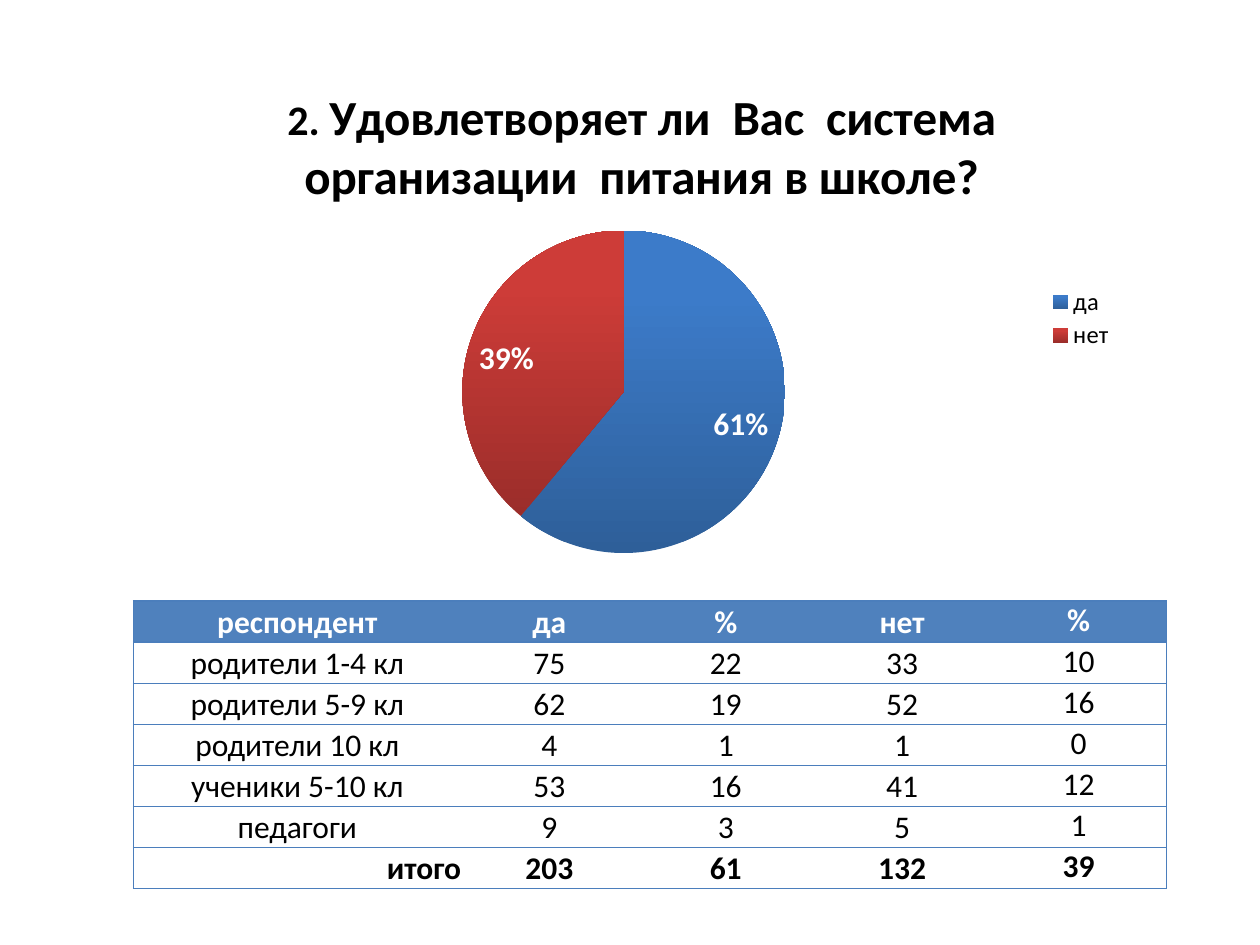
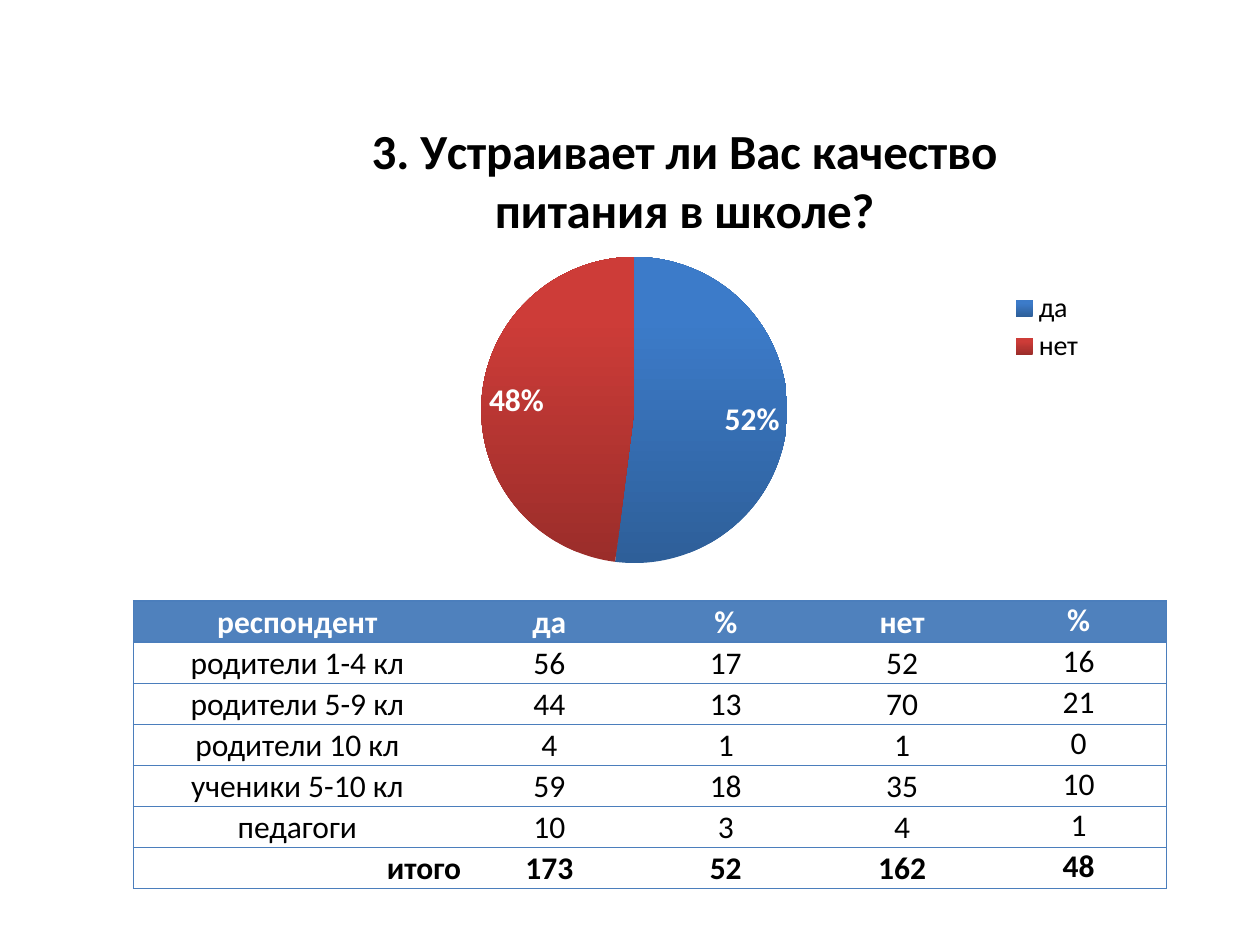
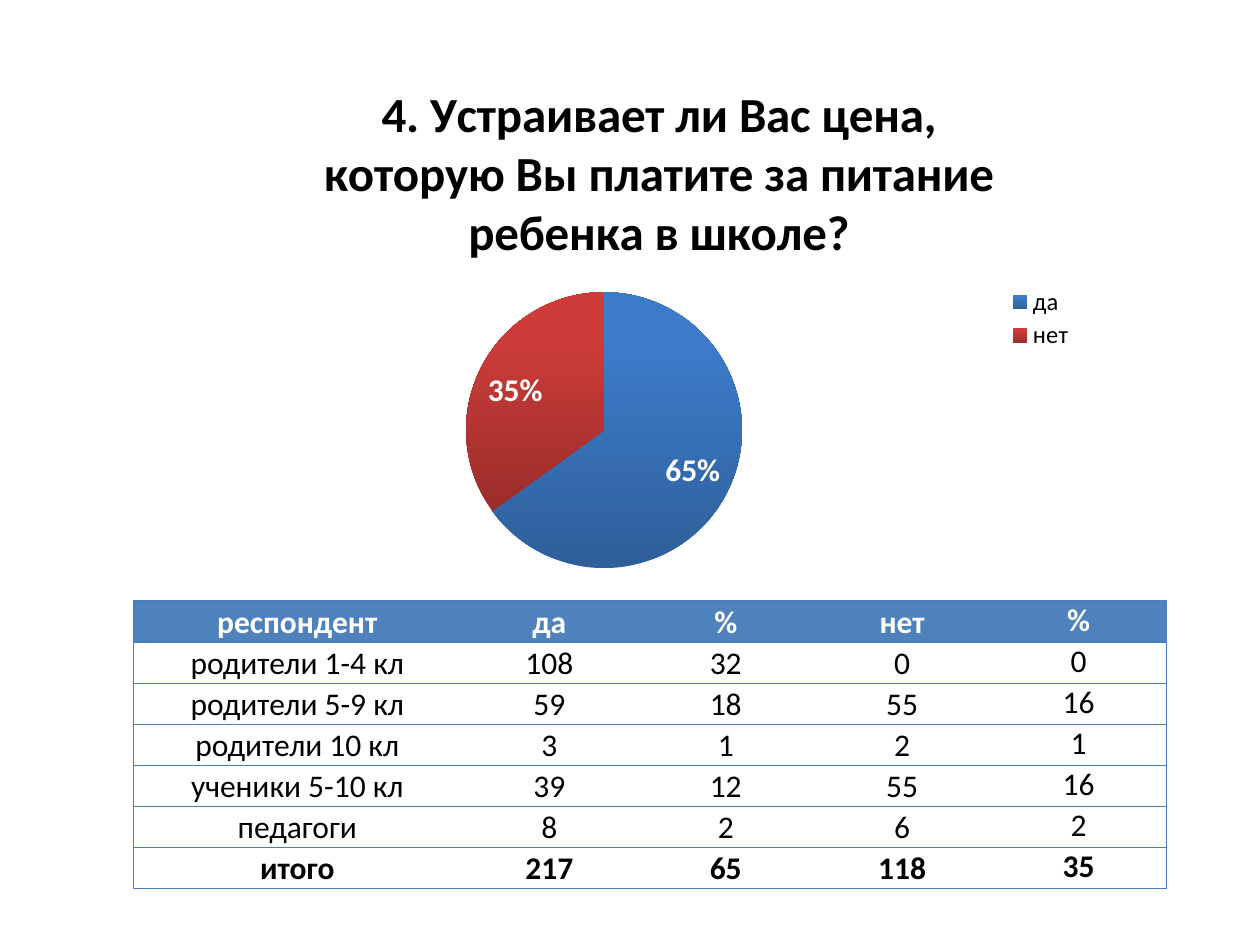
from lxml import etree
from pptx import Presentation
from pptx.chart.data import CategoryChartData as ChartData
from pptx.dml.color import RGBColor as RGB
from pptx.enum.chart import XL_CHART_TYPE as Kind, XL_LABEL_POSITION as Spot
from pptx.enum.chart import XL_LEGEND_POSITION as Side
from pptx.enum.text import MSO_ANCHOR as Anchor, PP_ALIGN as Align
from pptx.oxml import parse_xml
from pptx.oxml.ns import nsdecls, qn
from pptx.util import Inches, Pt

FONT = "Calibri"
BLACK = RGB(0, 0, 0)
WHITE = RGB(255, 255, 255)
HEAD = RGB(0x4F, 0x81, 0xBD)
RULE = RGB(0x4B, 0x7E, 0xBC)
# Dark and light end of each slice
SLICES = [
    (RGB(0x2E, 0x5F, 0x99), RGB(0x3C, 0x7B, 0xC9)),
    (RGB(0x9B, 0x2D, 0x2A), RGB(0xCD, 0x3C, 0x38)),
]
PLAIN = "{2D5ABB26-0587-4C30-8999-92F81FD0307C}"

ANSWERS = ["да", "нет"]
HEADER = ["респондент", "да", "%", "нет", "%"]
GROUPS = ["родители 1-4 кл", "родители 5-9 кл", "родители 10 кл",
          "ученики 5-10 кл", "педагоги"]
GRID = (1.06, 4.77, 8.2, 2.28)
WIDTHS = [2.6, 1.4, 1.4, 1.4, 1.4]

# Boxes are left, top, width, height; title is left, top; pie is left, top, size
POLLS = [
    dict(text=[("2. ", 24), ("Удовлетворяет ли  Вас  система организации  "
                             "питания в школе?", 28)],
         box=(1.61, 0.52, 7.32, 4.02), title=(2.25, 0.66),
         pie=(3.67, 1.83, 2.56), key=(8.28, 2.25, 0.6, 0.56), size=14,
         total=Align.RIGHT,
         rows=[(75, 22, 33, 10), (62, 19, 52, 16), (4, 1, 1, 0),
               (53, 16, 41, 12), (9, 3, 5, 1)]),
    dict(text=[("3. Устраивает ли Вас качество питания в школе?", 28)],
         box=(2.09, 0.6, 6.61, 4.02), title=(2.88, 0.86),
         pie=(3.82, 2.04, 2.43), key=(7.98, 2.28, 0.66, 0.64), size=16,
         total=Align.RIGHT,
         rows=[(56, 17, 52, 16), (44, 13, 70, 21), (4, 1, 1, 0),
               (59, 18, 35, 10), (10, 3, 4, 1)]),
    dict(text=[("4. Устраивает ли Вас цена, которую Вы платите за питание "
                "ребенка в школе?", 28)],
         box=(1.61, 0.36, 7.01, 4.33), title=(2.5, 0.57),
         pie=(3.7, 2.32, 2.19), key=(7.96, 2.25, 0.6, 0.56), size=14,
         total=Align.CENTER,
         rows=[(108, 32, 0, 0), (59, 18, 55, 16), (3, 1, 2, 1),
               (39, 12, 55, 16), (8, 2, 6, 2)]),
]


def style(font, size, color, bold=False):
    font.name, font.size, font.bold = FONT, Pt(size), bold
    font.color.rgb = color


def pin(part, box, spot, inner=False):
    """Fix a chart part at a slide position, as shares of the chart box."""
    left, top, width, height = box
    marks = {"x": (spot[0] - left) / width, "y": (spot[1] - top) / height}
    if len(spot) == 4:
        marks.update(w=spot[2] / width, h=spot[3] / height)
    target = '<c:layoutTarget val="inner"/>' if inner else ""
    modes = '<c:xMode val="edge"/><c:yMode val="edge"/>'
    vals = "".join(f'<c:{k} val="{v:.4f}"/>' for k, v in marks.items())
    layout = parse_xml(f'<c:layout {nsdecls("c")}><c:manualLayout>{target}'
                       f'{modes}{vals}</c:manualLayout></c:layout>')
    old = part.find(qn("c:layout"))
    if old is not None:
        part.remove(old)
    # Layout leads the plot area and follows the first child elsewhere
    part.insert(0 if inner else 1, layout)


def add_pie(slide, poll, shares):
    box = poll["box"]
    data = ChartData()
    data.categories = ANSWERS
    data.add_series("Series 1", shares)
    frame = slide.shapes.add_chart(Kind.PIE, *map(Inches, box), data)
    chart = frame.chart
    style(chart.font, 18, BLACK)

    # Title
    chart.has_title = True
    head = chart.chart_title
    para = head.text_frame.paragraphs[0]
    for text, size in poll["text"]:
        run = para.add_run()
        run.text = text
        style(run.font, size, BLACK, True)
    head.include_in_layout = False
    pin(head._element, box, poll["title"])

    # Legend
    chart.has_legend = True
    key = chart.legend
    key.position = Side.RIGHT
    key.include_in_layout = False
    style(key.font, poll["size"], BLACK)
    pin(key._element, box, poll["key"])

    # Slices and labels
    plot = chart.plots[0]
    plot.vary_by_categories = True
    for i, tones in enumerate(SLICES):
        fill = plot.series[0].points[i].format.fill
        fill.gradient()
        fill.gradient_angle = 90
        for stop, tone, place in zip(fill.gradient_stops, tones, (0, 0.8)):
            stop.color.rgb = tone
            stop.position = place
    plot.has_data_labels = True
    tags = plot.data_labels
    tags.show_percentage, tags.show_value = True, False
    tags.number_format, tags.number_format_is_linked = "0%", False
    tags.position = Spot.INSIDE_END
    style(tags.font, 18, WHITE, True)
    left, top, size = poll["pie"]
    area = chart._chartSpace.chart.plotArea
    pin(area, box, (left, top, size, size), inner=True)


def rule(cell, sides):
    props = cell._tc.get_or_add_tcPr()
    for n, side in enumerate(s for s in "LRTB" if s in sides):
        props.insert(n, parse_xml(
            f'<a:ln{side} {nsdecls("a")} w="9525"><a:solidFill>'
            f'<a:srgbClr val="{RULE}"/></a:solidFill></a:ln{side}>'))


def add_grid(slide, box, lines, total):
    last, edge = len(lines) - 1, len(WIDTHS) - 1
    table = slide.shapes.add_table(len(lines), len(WIDTHS),
                                   *map(Inches, box)).table
    table.first_row = table.horz_banding = False
    table._tbl.tblPr.find(qn("a:tableStyleId")).text = PLAIN
    for col, width in zip(table.columns, WIDTHS):
        col.width = Inches(width)
    for r, line in enumerate(lines):
        for c, value in enumerate(line):
            cell = table.cell(r, c)
            cell.margin_left = cell.margin_right = 0
            cell.margin_top = cell.margin_bottom = 0
            cell.vertical_anchor = Anchor.TOP if c == edge else Anchor.BOTTOM
            if r == 0:
                cell.fill.solid()
                cell.fill.fore_color.rgb = HEAD
            else:
                cell.fill.background()
            cell.text = str(value)
            para = cell.text_frame.paragraphs[0]
            para.alignment = total if (r, c) == (last, 0) else Align.CENTER
            style(para.font, 18, BLACK if r else WHITE, r in (0, last))
            rule(cell, "TB" + "L" * (c == 0) + "R" * (c == edge))


def add_poll(deck, poll):
    slide = deck.slides.add_slide(deck.slide_layouts[6])
    sums = [sum(col) for col in zip(*poll["rows"])]
    body = [[name, *row] for name, row in zip(GROUPS, poll["rows"])]
    add_grid(slide, GRID, [HEADER, *body, ["итого", *sums]], poll["total"])
    add_pie(slide, poll, sums[1::2])


def main():
    deck = Presentation()
    deck.slide_width, deck.slide_height = Inches(10), Inches(7.5)
    for poll in POLLS:
        add_poll(deck, poll)
    deck.save("out.pptx")


if __name__ == "__main__":
    main()
